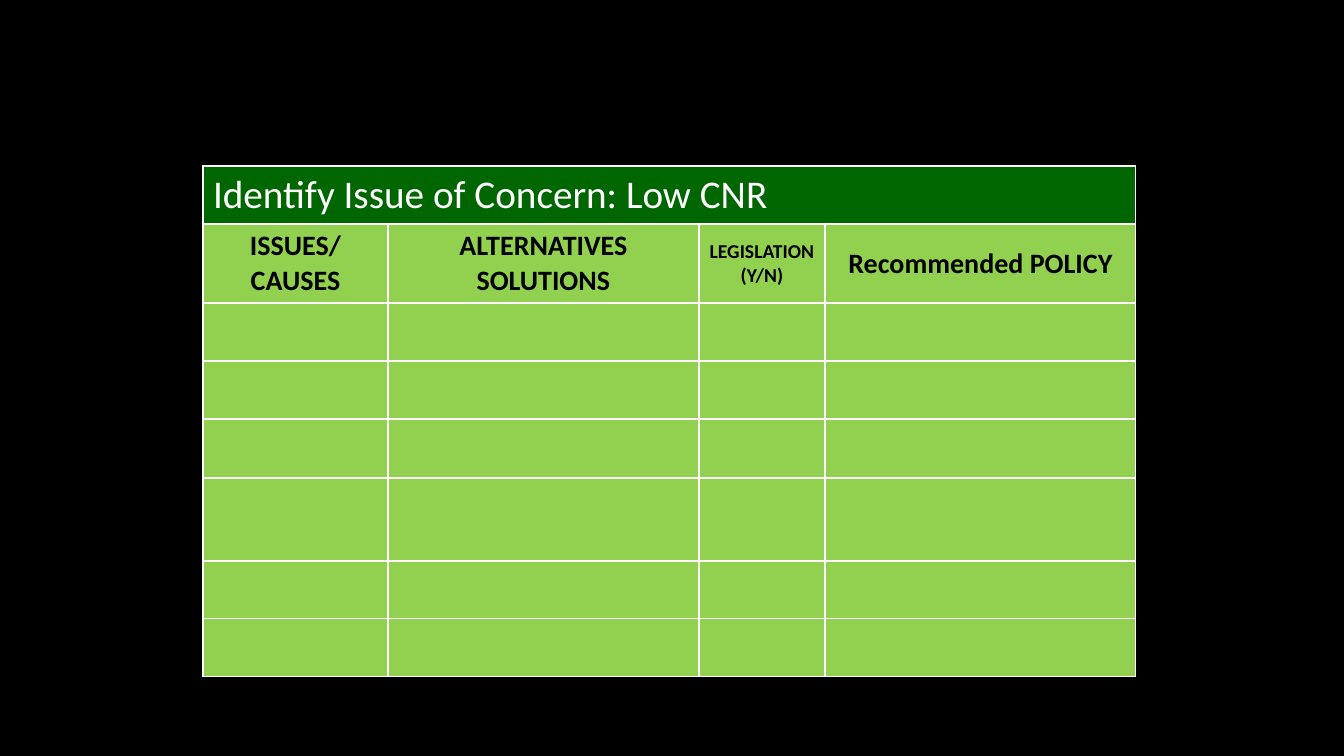
import dataclasses

import pptx
import pptx.dml.color
import pptx.enum.text
import pptx.oxml
import pptx.oxml.ns
import pptx.util

# Content
CONCERN = "Identify Issue of Concern: Low CNR"
HEADINGS = ["ISSUES/ CAUSES", "ALTERNATIVES SOLUTIONS", "LEGISLATION (Y/N)", "Recommended POLICY"]

# Layout in px
PX = 12192000 / 1344
SLIDE_SIZE = (1344, 756)
TABLE_LEFT, TABLE_TOP = 203, 166
COLUMN_WIDTHS = [185, 311, 126, 311]
ROW_HEIGHTS = [58, 79, 58, 58, 59, 83, 58, 58]


@dataclasses.dataclass(frozen=True)
class Theme:
    font: str = "Calibri"
    background: str = "000000"
    banner: str = "006600"
    body: str = "92D050"
    light: str = "FFFFFF"
    dark: str = "000000"
    banner_size: int = 28
    heading_size: int = 20
    small_size: int = 14
    border_width: int = 1


THEME = Theme()


def px(length):
    return pptx.util.Emu(round(length * PX))


def rgb(colour):
    return pptx.dml.color.RGBColor.from_string(colour)


def write(cell, text, *, size, colour, bold=False, align=None, anchor=None):
    cell.vertical_anchor = anchor
    paragraph = cell.text_frame.paragraphs[0]
    paragraph.alignment = align
    run = paragraph.add_run()
    run.text = text
    run.font.name = THEME.font
    run.font.size = pptx.util.Pt(size)
    run.font.bold = bold
    run.font.color.rgb = rgb(colour)


def paint(cell, fill):
    properties = cell._tc.get_or_add_tcPr()
    for side in ("lnL", "lnR", "lnT", "lnB"):
        properties.append(pptx.oxml.parse_xml(
            f'<a:{side} {pptx.oxml.ns.nsdecls("a")} w="{pptx.util.Pt(THEME.border_width)}">'
            f'<a:solidFill><a:srgbClr val="{THEME.light}"/></a:solidFill></a:{side}>'))
    cell.fill.solid()
    cell.fill.fore_color.rgb = rgb(fill)


def main():
    # Slide
    deck = pptx.Presentation()
    deck.slide_width, deck.slide_height = map(px, SLIDE_SIZE)
    slide = deck.slides.add_slide(deck.slide_layouts[6])
    slide.background.fill.solid()
    slide.background.fill.fore_color.rgb = rgb(THEME.background)

    # Table grid
    policy_table = slide.shapes.add_table(
        len(ROW_HEIGHTS), len(COLUMN_WIDTHS), px(TABLE_LEFT), px(TABLE_TOP),
        px(sum(COLUMN_WIDTHS)), px(sum(ROW_HEIGHTS))).table
    for column, width in zip(policy_table.columns, COLUMN_WIDTHS):
        column.width = px(width)
    for index, (row, height) in enumerate(zip(policy_table.rows, ROW_HEIGHTS)):
        row.height = px(height)
        for cell in row.cells:
            paint(cell, THEME.body if index else THEME.banner)

    # Banner
    banner = policy_table.cell(0, 0)
    banner.merge(policy_table.cell(0, len(COLUMN_WIDTHS) - 1))
    write(banner, CONCERN, size=THEME.banner_size, colour=THEME.light)

    # Column headings
    for index, heading in enumerate(HEADINGS):
        size = THEME.small_size if heading.startswith("LEGISLATION") else THEME.heading_size
        write(policy_table.cell(1, index), heading, size=size, colour=THEME.dark, bold=True,
              align=pptx.enum.text.PP_ALIGN.CENTER,
              anchor=pptx.enum.text.MSO_ANCHOR.MIDDLE)

    deck.save("out.pptx")


if __name__ == "__main__":
    main()
